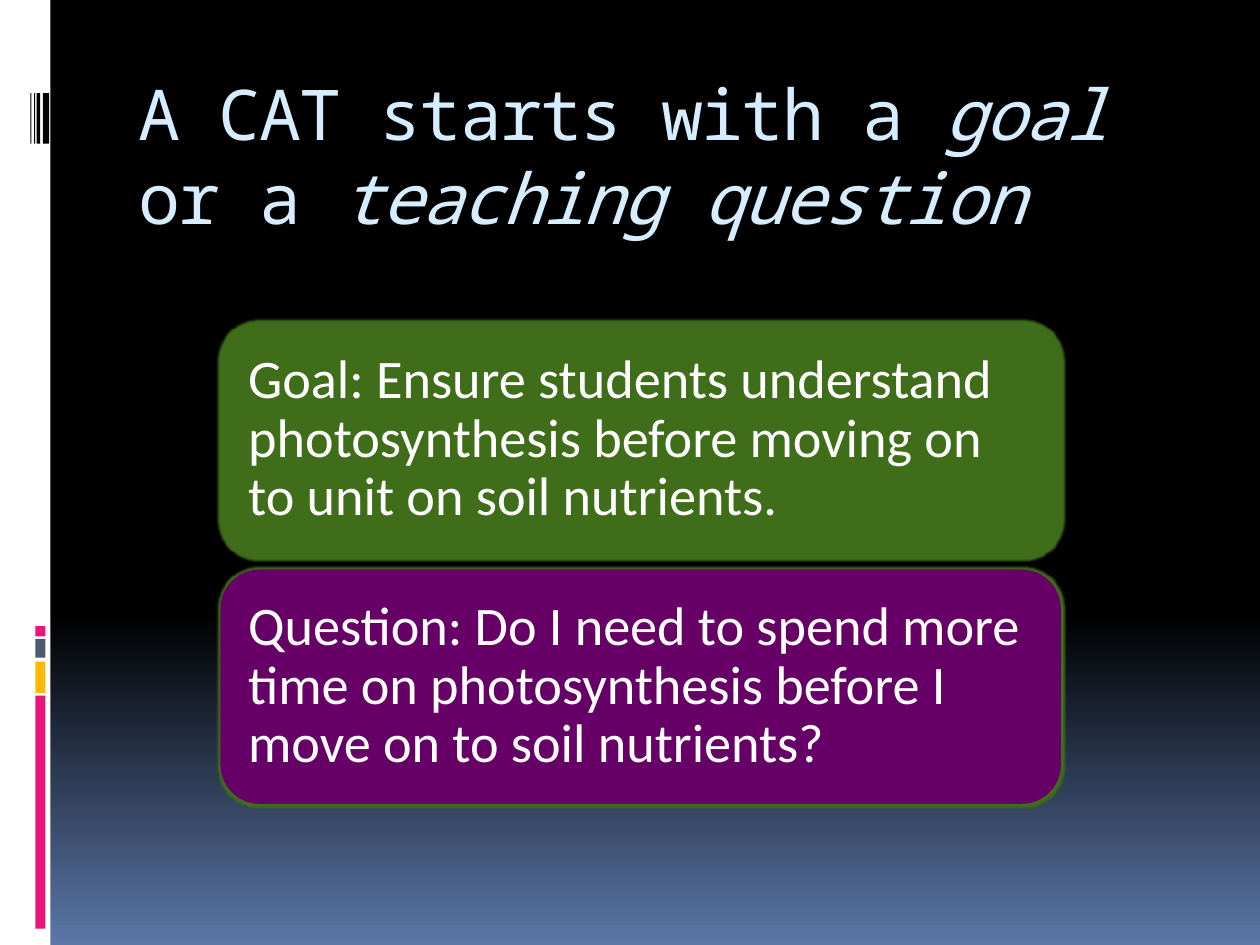
from lxml import etree
from pptx import Presentation
from pptx.dml.color import RGBColor
from pptx.enum.shapes import MSO_SHAPE
from pptx.enum.text import MSO_ANCHOR, PP_ALIGN
from pptx.oxml.ns import qn
from pptx.util import Inches, Pt

RECT, ROUNDED = MSO_SHAPE.RECTANGLE, MSO_SHAPE.ROUNDED_RECTANGLE
TOP, MIDDLE = MSO_ANCHOR.TOP, MSO_ANCHOR.MIDDLE
LEFT = PP_ALIGN.LEFT

BLACK = RGBColor(0x00, 0x00, 0x00)
WHITE = RGBColor(0xFF, 0xFF, 0xFF)
BLUE = RGBColor(0x5B, 0x77, 0xA8)
PALE_BLUE = RGBColor(0xD6, 0xEC, 0xFF)
PINK = RGBColor(0xEA, 0x15, 0x7A)
AMBER = RGBColor(0xFE, 0xB8, 0x0A)
SLATE = RGBColor(0x4E, 0x5B, 0x6F)
GREEN = RGBColor(0x3F, 0x6D, 0x19)
PURPLE = RGBColor(0x66, 0x00, 0x66)

SLIDE_W, SLIDE_H = 10, 7.5
BAND_W = 0.04 * SLIDE_W
CARD_LEFT, CARD_TOP = 1.75, 2.56
CARD_W, CARD_H, CARD_STEP = 6.67, 1.86, 1.96

# Accent blocks on the band: top, height, colour
ACCENTS = [(4.97, 0.08, PINK), (5.07, 0.15, SLATE),
           (5.25, 0.25, AMBER), (5.52, 1.85, PINK)]
# Barcode stripes: left, width
STRIPES = [(0.24, 0.01), (0.27, 0.01), (0.29, 0.03), (0.34, 0.05)]
# Title runs: text, italic
TITLE = [("A CAT starts with a ", False), ("goal", True),
         (" or a ", False), ("teaching question", True)]
CARDS = [
    ("Goal: Ensure students understand photosynthesis before moving on to "
     "unit on soil nutrients.", GREEN),
    ("Question: Do I need to spend more time on photosynthesis before I "
     "move on to soil nutrients?", PURPLE),
]


def set_background(slide):
    fill = slide.background.fill
    fill.gradient()
    fill.gradient_angle = 270
    for stop, position, color in zip(fill.gradient_stops, (0.65, 1), (BLACK, BLUE)):
        stop.position = position
        stop.color.rgb = color


def add_block(slide, left, top, width, height, color, kind=RECT):
    sp = slide.shapes.add_shape(kind, Inches(left), Inches(top),
                                Inches(width), Inches(height))
    sp.shadow.inherit = False
    sp.fill.solid()
    sp.fill.fore_color.rgb = color
    sp.line.fill.background()
    return sp


def format_run(r, font, size, color):
    r.font.name = font
    r.font.size = Pt(size)
    r.font.color.rgb = color


def add_glow(sp, color, radius):
    effects = sp._element.spPr.find(qn("a:effectLst"))
    glow = etree.SubElement(effects, qn("a:glow"), rad=str(Pt(radius)))
    etree.SubElement(glow, qn("a:srgbClr"), val=str(color))


def add_title(slide):
    box = slide.shapes.add_textbox(Inches(1), Inches(0.56), Inches(8.5), Inches(1))
    tf = box.text_frame
    tf.word_wrap = True
    tf.vertical_anchor = TOP
    tf.margin_top = 0
    p = tf.paragraphs[0]
    for text, italic in TITLE:
        r = p.add_run()
        r.text = text
        format_run(r, "Noto Sans Mono", 40, PALE_BLUE)
        r.font.italic = italic
        r.font._element.set("spc", "-100")


def add_card(slide, row, text, color):
    sp = add_block(slide, CARD_LEFT, CARD_TOP + row * CARD_STEP,
                   CARD_W, CARD_H, color, ROUNDED)
    add_glow(sp, GREEN, 3)
    tf = sp.text_frame
    tf.word_wrap = True
    tf.vertical_anchor = MIDDLE
    tf.margin_left = tf.margin_right = Inches(0.13)
    tf.margin_top = tf.margin_bottom = Inches(0.13)
    tf.text = text
    p = tf.paragraphs[0]
    p.alignment = LEFT
    p.line_spacing = 0.9
    format_run(p.runs[0], "Calibri", 31, WHITE)


def main():
    prs = Presentation()
    prs.slide_width, prs.slide_height = Inches(SLIDE_W), Inches(SLIDE_H)
    slide = prs.slides.add_slide(prs.slide_layouts[6])
    set_background(slide)

    # Side band with its decorations
    add_block(slide, 0, 0, BAND_W, SLIDE_H, WHITE)
    for top, height, color in ACCENTS:
        add_block(slide, 0.28, top, 0.08, height, color)
    for left, width in STRIPES:
        add_block(slide, left, 0.74, width, 0.4, BLACK)

    # Title and the two cards
    add_title(slide)
    for row, (text, color) in enumerate(CARDS):
        add_card(slide, row, text, color)

    prs.save("out.pptx")


if __name__ == "__main__":
    main()
